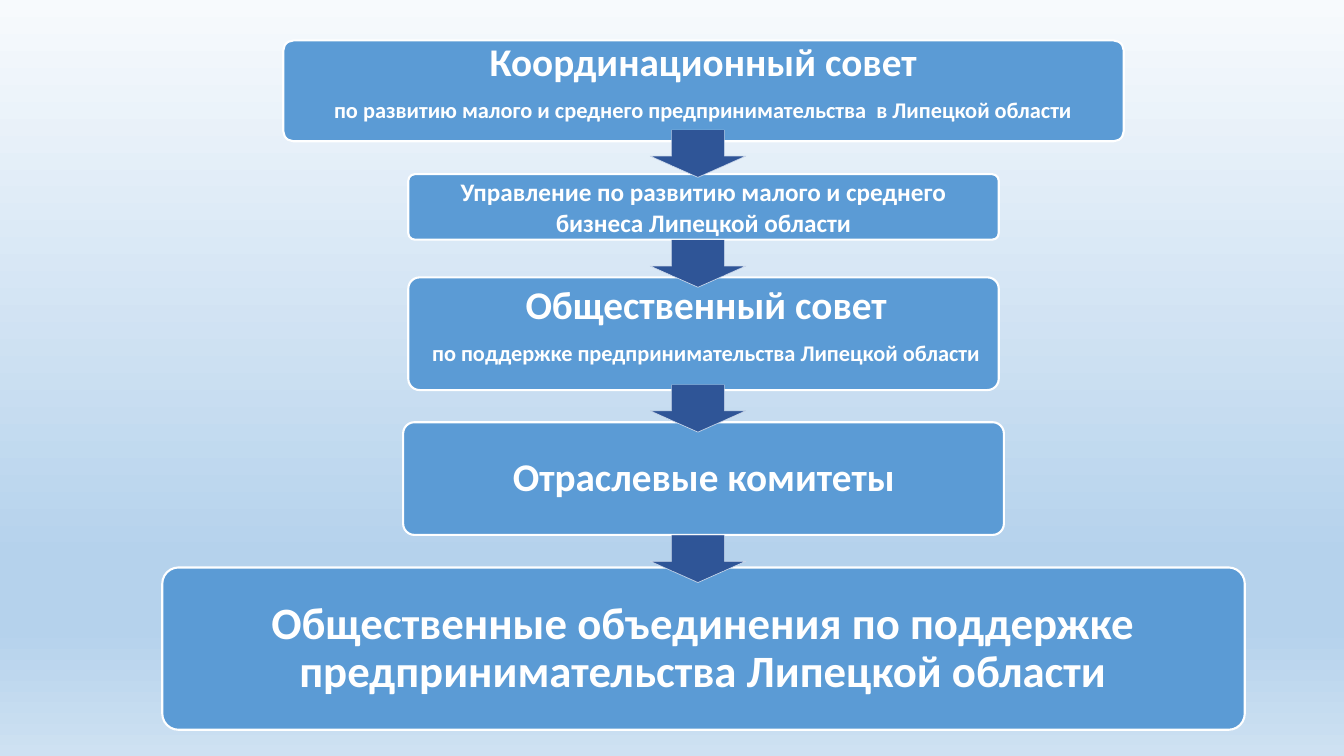
from dataclasses import dataclass

from lxml import etree
from pptx import Presentation
from pptx import util as u
from pptx.dml.color import RGBColor
from pptx.enum import shapes, text
from pptx.oxml.ns import qn


@dataclass(frozen=True)
class Theme:
    font: str = "Calibri"
    box: str = "5B9BD5"
    white: str = "FFFFFF"
    arrow: str = "2F5597"
    arrow_edge: str = "D2DEEF"
    sky: tuple = ((0, "F7FAFD"), (74, "B5D2EC"), (83, "B5D2EC"), (100, "CEE1F2"))
    headline: int = 32
    title: int = 28
    body: int = 18
    small: int = 16


T = Theme()
BOX_AXIS = 17.73
ARROW_AXIS = 17.59
ARROW_TOPS = (3.28, 6.05, 9.7, 13.49)

# Box: top, width, height; label: offset from the box and size, or None for
# text inside the box itself; lines: wording and type size.
LEVELS = (
    ((1.02, 21.18, 2.54), (0.1, 0.07, 20.96, 2.01), (
        ("Координационный совет", T.title),
        ("по развитию малого и среднего предпринимательства  в Липецкой области", T.small))),
    ((4.39, 14.88, 1.65), None, (
        ("Управление по развитию малого и среднего бизнеса Липецкой области", T.body),)),
    ((6.99, 14.88, 2.84), (0.15, -0.11, 14.71, 2.67), (
        ("Общественный совет", T.title),
        ("по поддержке предпринимательства Липецкой области", T.small))),
    ((10.64, 15.14, 2.84), (0.08, 0.08, 14.99, 2.67), (
        ("Отраслевые комитеты", T.title),)),
    ((14.3, 27.28, 4.09), (0.13, 0.13, 27, 3.86), (
        ("Общественные объединения по поддержке предпринимательства Липецкой области",
         T.headline),)),
)


def cm(*lengths):
    return [u.Cm(v) for v in lengths]


def paint_background(s):
    fill = s.background.fill
    fill.gradient()
    fill.gradient_angle = 270
    stops = s.element.find(".//" + qn("a:gsLst"))
    for gs in list(stops):
        stops.remove(gs)
    for pos, color in T.sky:
        gs = etree.SubElement(stops, qn("a:gs"), pos=str(pos * 1000))
        etree.SubElement(gs, qn("a:srgbClr"), val=color)


def add_solid(parent, kind, box, fill, line=None, width=0):
    sp = parent.shapes.add_shape(kind, *cm(*box))
    sp.shadow.inherit = False
    sp.fill.solid()
    sp.fill.fore_color.rgb = RGBColor.from_string(fill)
    if line:
        sp.line.color.rgb = RGBColor.from_string(line)
        sp.line.width = u.Pt(width)
    else:
        sp.line.fill.background()
    return sp


def write_lines(tf, lines, spacing=1.0, after=0.0):
    """Fill a frame with centred bold lines; after is a share of the type size."""
    tf.word_wrap = True
    tf.vertical_anchor = text.MSO_ANCHOR.MIDDLE
    for i, (words, size) in enumerate(lines):
        p = tf.add_paragraph() if i else tf.paragraphs[0]
        p.alignment = text.PP_ALIGN.CENTER
        p.line_spacing = spacing
        p.space_after = u.Pt(size * after)
        r = p.add_run()
        r.text = words
        r.font.name = T.font
        r.font.size = u.Pt(size)
        r.font.bold = True
        r.font.color.rgb = RGBColor.from_string(T.white)


def add_level(group, box, label, lines):
    top, width, height = box
    left = BOX_AXIS - width / 2
    sp = add_solid(group, shapes.MSO_SHAPE.ROUNDED_RECTANGLE,
                   (left, top, width, height), T.box, T.white, 1.5)
    sp.adjustments[0] = 0.1
    if label is None:
        write_lines(sp.text_frame, lines)
        return
    dx, dy, w, h = label
    tf = group.shapes.add_textbox(*cm(left + dx, top + dy, w, h)).text_frame
    tf.margin_left = tf.margin_right = tf.margin_top = tf.margin_bottom = u.Cm(0.18)
    write_lines(tf, lines, spacing=0.9, after=0.35)


def add_arrow(s, top, width=2.41, height=1.19, shaft=1.32, shaft_height=0.89):
    group = s.shapes.add_group_shape()
    sp = add_solid(group, shapes.MSO_SHAPE.DOWN_ARROW,
                   (ARROW_AXIS - width / 2, top, width, height),
                   T.arrow, T.arrow_edge, 0.5)
    sp.adjustments[0] = 0.55
    sp.adjustments[1] = 0.45
    edge = sp.line.fill._xPr.find(".//" + qn("a:srgbClr"))
    etree.SubElement(edge, qn("a:alpha"), val="90000")
    add_solid(group, shapes.MSO_SHAPE.RECTANGLE,
              (ARROW_AXIS - shaft / 2, top, shaft, shaft_height), T.arrow)


def build_hierarchy(s):
    paint_background(s)
    group = s.shapes.add_group_shape()
    for box, label, lines in LEVELS:
        add_level(group, box, label, lines)
    for top in ARROW_TOPS:
        add_arrow(s, top)


def main():
    prs = Presentation()
    prs.slide_width, prs.slide_height = cm(33.87, 19.05)
    build_hierarchy(prs.slides.add_slide(prs.slide_layouts[6]))
    prs.save("out.pptx")


if __name__ == "__main__":
    main()
